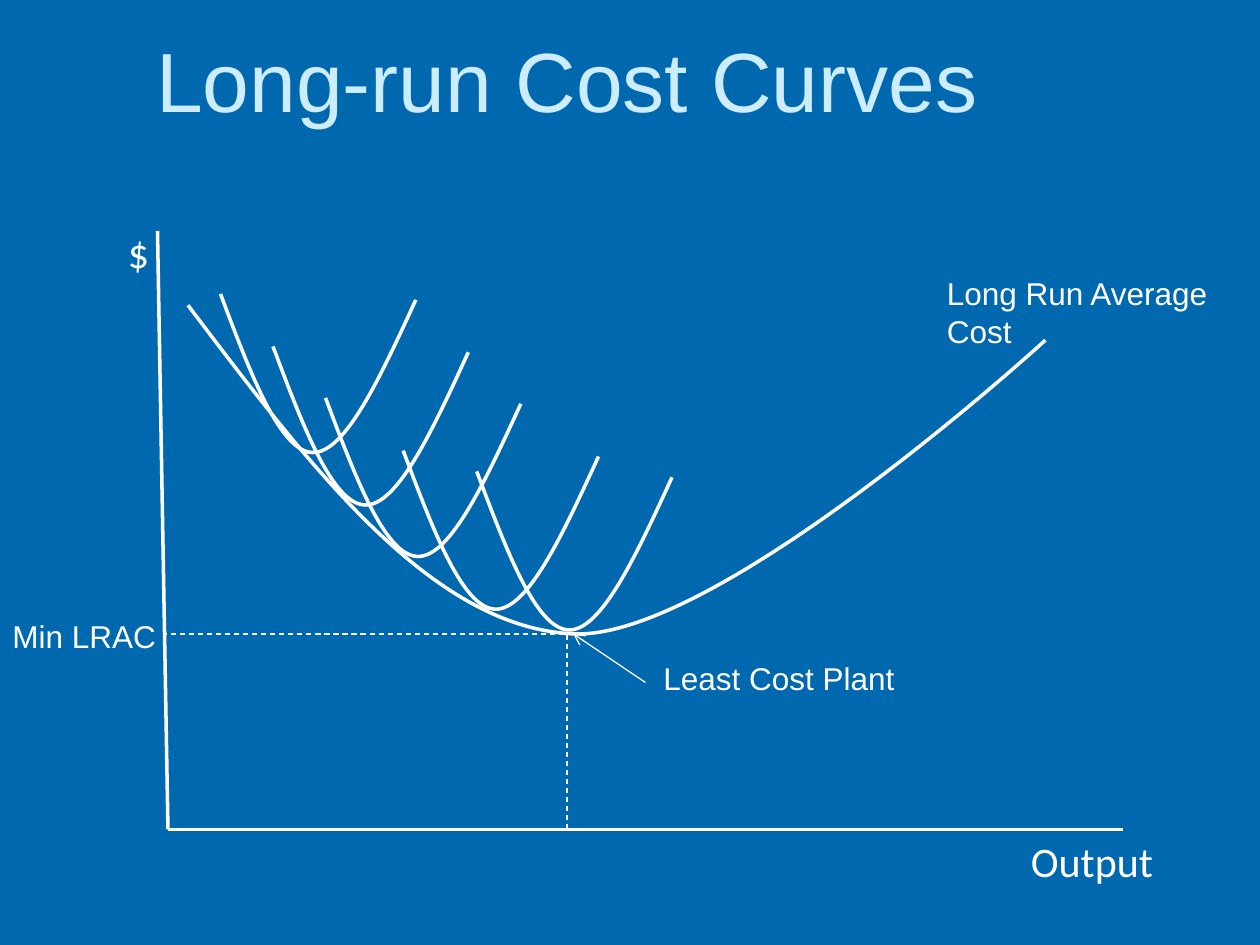
from lxml.etree import SubElement
from pptx import Presentation
from pptx.dml.color import RGBColor
from pptx.enum.dml import MSO_LINE
from pptx.enum.shapes import MSO_CONNECTOR
from pptx.enum.text import MSO_ANCHOR, PP_ALIGN
from pptx.oxml.ns import qn
from pptx.util import Inches, Pt

BLUE = RGBColor(0x00, 0x68, 0xAE)
PALE = RGBColor(0xCC, 0xEC, 0xFF)
WHITE = RGBColor(0xFF, 0xFF, 0xFF)

CELL = Inches(10) / 120
TITLE_BOX = (0, 0, 108, 15)
CHART_BOX = (0, 15, 120, 75)

AXES = [((15, 7), (16, 64)), ((107, 64), (16, 64))]
GUIDES = [((54, 64), (54, 45.37)), ((54.6, 45.37), (15.5, 45.37))]
POINTER = ((61.47, 50), (54.6, 45.37))
PLANT_STARTS = [(21, 13), (26, 18), (31, 22.9), (38.4, 27.92), (45.4, 29.9)]
PLANT_CURVE = [(0, 0), (2.82, 7.5), (5.64, 15), (8.76, 15.1),
               (11.88, 15.2), (15.24, 7.88), (18.6, 0.56)]
LONG_RUN_CURVE = [(17.9, 14.07), (29.5, 29.4), (41, 44.75), (54.6, 45.37),
                  (68.28, 46), (99.56, 17.4), (99.56, 17.4)]
LABELS = [
    ("$", (11, 6, 8, 6), "Calibri", 24),
    ("Output", (97, 64, 21, 6), "Calibri", 24),
    ("Long Run Average Cost", (89, 10.53, 30, 8.5), "Arial", 18),
    ("Min LRAC", (0, 43.2, 18, 4.8), "Arial", 18),
    ("Least Cost Plant", (62, 47.2, 48, 4.8), "Arial", 18),
]


def emu(*cells):
    """Convert grid cells to EMU."""
    return [round(c * CELL) for c in cells]


def shift(point, origin):
    """Move a point by the first two values of origin."""
    return point[0] + origin[0], point[1] + origin[1]


def style_text(tf, text, font, size, color):
    """Set one paragraph of text and its font."""
    tf.text = text
    tf.word_wrap = True
    r = tf.paragraphs[0].runs[0]
    r.font.name = font
    r.font.size = Pt(size)
    r.font.color.rgb = color


def add_line(s, box, ends, width, dash=None, arrow=False):
    """Draw a straight white line between two points of the box."""
    start, end = (emu(*shift(p, box)) for p in ends)
    line = s.shapes.add_connector(MSO_CONNECTOR.STRAIGHT, *start, *end)
    line.line.color.rgb = WHITE
    line.line.width = Pt(width)
    if dash:
        line.line.dash_style = dash
    if arrow:
        SubElement(line.line._get_or_add_ln(), qn("a:tailEnd"), type="arrow")
    SubElement(line._element.spPr, qn("a:effectLst"))


def bend_segments(sp, points):
    """Turn each straight segment of a freeform into a cubic curve."""
    segments = list(sp._element.iter(qn("a:lnTo")))
    for i, segment in enumerate(segments):
        segment.clear()
        curve = SubElement(segment.getparent(), qn("a:cubicBezTo"))
        segment.getparent().replace(segment, curve)
        for x, y in points[3 * i + 1:3 * i + 4]:
            SubElement(curve, qn("a:pt"), x=str(x - sp.left), y=str(y - sp.top))


def add_curve(s, origin, cells):
    """Draw a smooth open curve through chained cubic segments."""
    points = [emu(*shift(p, origin)) for p in cells]
    builder = s.shapes.build_freeform(*points[0])
    builder.add_line_segments(points[3::3], close=False)
    sp = builder.convert_to_shape()
    bend_segments(sp, points)
    sp.shadow.inherit = False
    sp.fill.background()
    sp.line.color.rgb = WHITE
    sp.line.width = Pt(2)


def add_label(s, box, text, area, font, size):
    """Place a white label in an area of the box."""
    sp = s.shapes.add_textbox(*emu(*shift(area, box), *area[2:]))
    style_text(sp.text_frame, text, font, size, WHITE)


def add_title(s, box):
    """Place the slide title."""
    sp = s.shapes.title
    sp.left, sp.top, sp.width, sp.height = emu(*box)
    tf = sp.text_frame
    style_text(tf, "Long-run Cost Curves", "Arial", 48, PALE)
    tf.vertical_anchor = MSO_ANCHOR.MIDDLE
    tf.paragraphs[0].alignment = PP_ALIGN.CENTER


def add_cost_diagram(s, box):
    """Draw axes, cost curves, guides and labels in the box."""
    for ends in AXES:
        add_line(s, box, ends, 2)
    for start in PLANT_STARTS:
        add_curve(s, shift(start, box), PLANT_CURVE)
    add_curve(s, box, LONG_RUN_CURVE)
    for ends in GUIDES:
        add_line(s, box, ends, 0.75, dash=MSO_LINE.DASH)
    add_line(s, box, POINTER, 0.75, arrow=True)
    for label in LABELS:
        add_label(s, box, *label)


def main():
    """Build and save the slide."""
    prs = Presentation()
    prs.slide_width, prs.slide_height = Inches(10), Inches(7.5)
    s = prs.slides.add_slide(prs.slide_layouts[5])
    s.background.fill.solid()
    s.background.fill.fore_color.rgb = BLUE
    add_title(s, TITLE_BOX)
    add_cost_diagram(s, CHART_BOX)
    prs.save("out.pptx")


if __name__ == "__main__":
    main()
